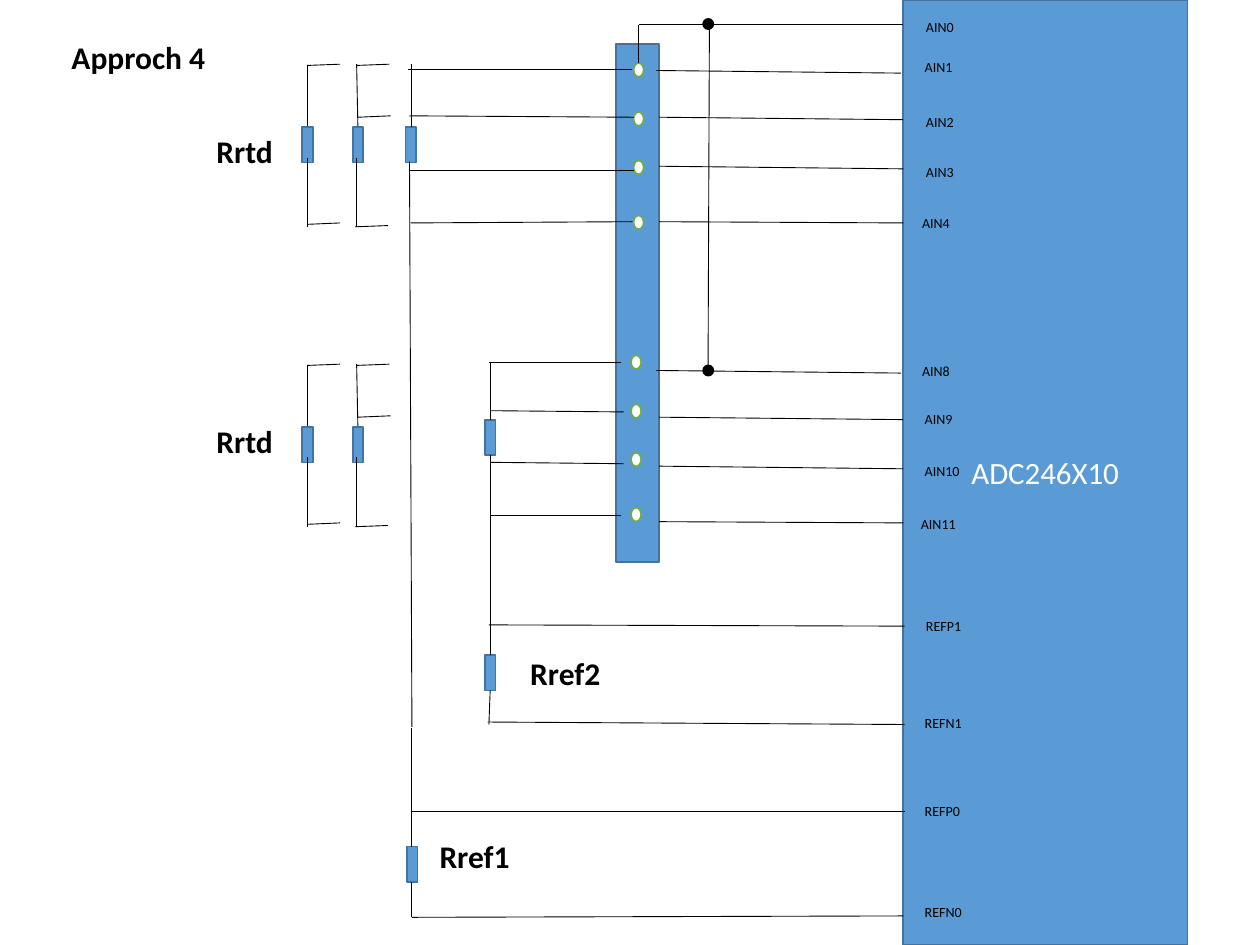
"""Build the RTD wiring diagram, approach 4, on one slide."""
from lxml import etree
from pptx import Presentation
from pptx.dml.color import RGBColor
from pptx.enum.shapes import MSO_CONNECTOR, MSO_SHAPE
from pptx.enum.text import MSO_ANCHOR, PP_ALIGN
from pptx.oxml.ns import qn
from pptx.util import Pt

STRAIGHT = MSO_CONNECTOR.STRAIGHT
RECTANGLE, OVAL = MSO_SHAPE.RECTANGLE, MSO_SHAPE.OVAL
MIDDLE, CENTER = MSO_ANCHOR.MIDDLE, PP_ALIGN.CENTER
BLUE = RGBColor(0x5B, 0x9B, 0xD5)
DARK_BLUE = RGBColor(0x43, 0x73, 0x9E)
GREEN = RGBColor(0x70, 0xAD, 0x47)
WHITE = RGBColor(0xFF, 0xFF, 0xFF)
BLACK = RGBColor(0, 0, 0)
GROUP_SHIFT = 171.4
RESISTOR_SIZE = (6, 20.2)

presentation = Presentation()
presentation.slide_width, presentation.slide_height = Pt(720), Pt(540)
slide = presentation.slides.add_slide(presentation.slide_layouts[6])


def add_part(kind, left, top, width, height, fill, outline):
    shape = slide.shapes.add_shape(kind, Pt(left), Pt(top), Pt(width), Pt(height))
    shape.shadow.inherit = False
    shape.fill.solid()
    shape.fill.fore_color.rgb = fill
    shape.line.color.rgb = outline
    shape.line.width = Pt(1)
    return shape


def style_text(text_frame, text, size, color, bold=False):
    text_frame.word_wrap = True
    paragraph = text_frame.paragraphs[0]
    paragraph.text = text
    paragraph.font.name = "Calibri"
    paragraph.font.size = Pt(size)
    paragraph.font.bold = bold
    paragraph.font.color.rgb = color
    return paragraph


chip = add_part(RECTANGLE, 516, 0, 162.6, 540, BLUE, DARK_BLUE)
chip.text_frame.vertical_anchor = MIDDLE
style_text(chip.text_frame, "ADC246X10", 17.7, WHITE).alignment = CENTER

add_part(RECTANGLE, 352.2, 25.2, 24.5, 296, BLUE, DARK_BLUE)
for left, shift in ((362, 0), (360.6, 167)):
    for top in (36, 64, 91.7, 123.1):
        add_part(OVAL, left, top + shift, 5.8, 7.9, WHITE, GREEN)

resistors = [(231.8, 72.7), (277.2, 239.8), (277.2, 374.4), (232.6, 483.8)]
wires = [
    (365, 13.7, 516.2, 13.7), (365, 14.4, 365, 36),
    (235.4, 72.7, 235.4, 36.7), (235.4, 415.4, 234, 92.2),
    (361.4, 39.6, 233.3, 39.6), (362.2, 67, 234, 66.2),
    (362.2, 97.2, 234, 97.2), (361.4, 126.7, 234.7, 127.4),
    (280.1, 239.8, 280.1, 206.6), (280.1, 374.4, 280.1, 259.9),
    (355, 207.4, 279.4, 207.4), (356.4, 235.4, 280.1, 234.7),
    (356.4, 265, 280.1, 264.2), (355, 294.5, 280.1, 294.5),
    (279.4, 357.1, 517, 357.8), (280.1, 394.6, 279.4, 414),
    (278.6, 412.6, 517, 414),
    (235.4, 483.8, 235.4, 416.2), (235.4, 504, 235.4, 524.2),
    (235.4, 463.7, 517, 463.7), (235.4, 524.2, 516.2, 523.4),
    (405.4, 13, 404.6, 214.6),
]
for shift in (0, GROUP_SHIFT):
    resistors += [(left, 72.7 + shift) for left in (172.8, 201.6)]
    group_wires = [
        (375.1, 40.3, 514.8, 41.8), (376.6, 67, 516.2, 68.4),
        (376.6, 95, 516.2, 96.5), (376.6, 126.7, 516.2, 127.4),
        (204.5, 72, 203.8, 36.7), (203.8, 129.6, 203.8, 90),
        (203.8, 37.4, 222.5, 36.7), (204.5, 67, 223.2, 66.2),
        (203, 129.6, 221.8, 128.9),
        (175.7, 72, 175.7, 37.4), (175.7, 129.6, 175.7, 90),
        (175.7, 37.4, 194.4, 36.7), (175.7, 128.2, 194.4, 127.4),
    ]
    wires += [(x1, y1 + shift, x2, y2 + shift) for x1, y1, x2, y2 in group_wires]

for left, top in resistors:
    add_part(RECTANGLE, left, top, *RESISTOR_SIZE, BLUE, DARK_BLUE)

for wire in wires:
    connector = slide.shapes.add_connector(STRAIGHT, *(Pt(value) for value in wire))
    connector.line.color.rgb = BLACK
    connector.line.width = Pt(0.5)
    etree.SubElement(connector._element.spPr, qn("a:effectLst"))

for top in (10.8, 208.8):
    add_part(OVAL, 401.8, top, 5.8, 5.8, BLACK, BLACK)

pin_labels = [
    ("AIN0", 522, 7.2), ("AIN1", 521.3, 30.2), ("AIN2", 522, 61.2),
    ("AIN3", 522, 90), ("AIN4", 519.8, 118.8), ("AIN8", 519.8, 203.8),
    ("AIN9", 521.3, 231.1), ("AIN10", 521.3, 260.6), ("AIN11", 519.1, 290.9),
    ("REFP1", 522, 349.2), ("REFN1", 521.3, 404.6),
    ("REFP0", 521.3, 455), ("REFN0", 521.3, 512.6),
]
headings = [
    ("Approch 4", 33.8, 18, 170.6), ("Rrtd", 116.6, 72, 56.2),
    ("Rrtd", 116.6, 237.6, 56.2), ("Rref2", 295.9, 370.1, 60.5),
    ("Rref1", 244.1, 474.5, 60.5),
]
labels = [(*label, 44.6, 16.6, 8, False) for label in pin_labels]
labels += [(*heading, 28.8, 18, True) for heading in headings]
for text, left, top, width, height, size, bold in labels:
    box = slide.shapes.add_textbox(Pt(left), Pt(top), Pt(width), Pt(height))
    style_text(box.text_frame, text, size, BLACK, bold)

presentation.save("out.pptx")
